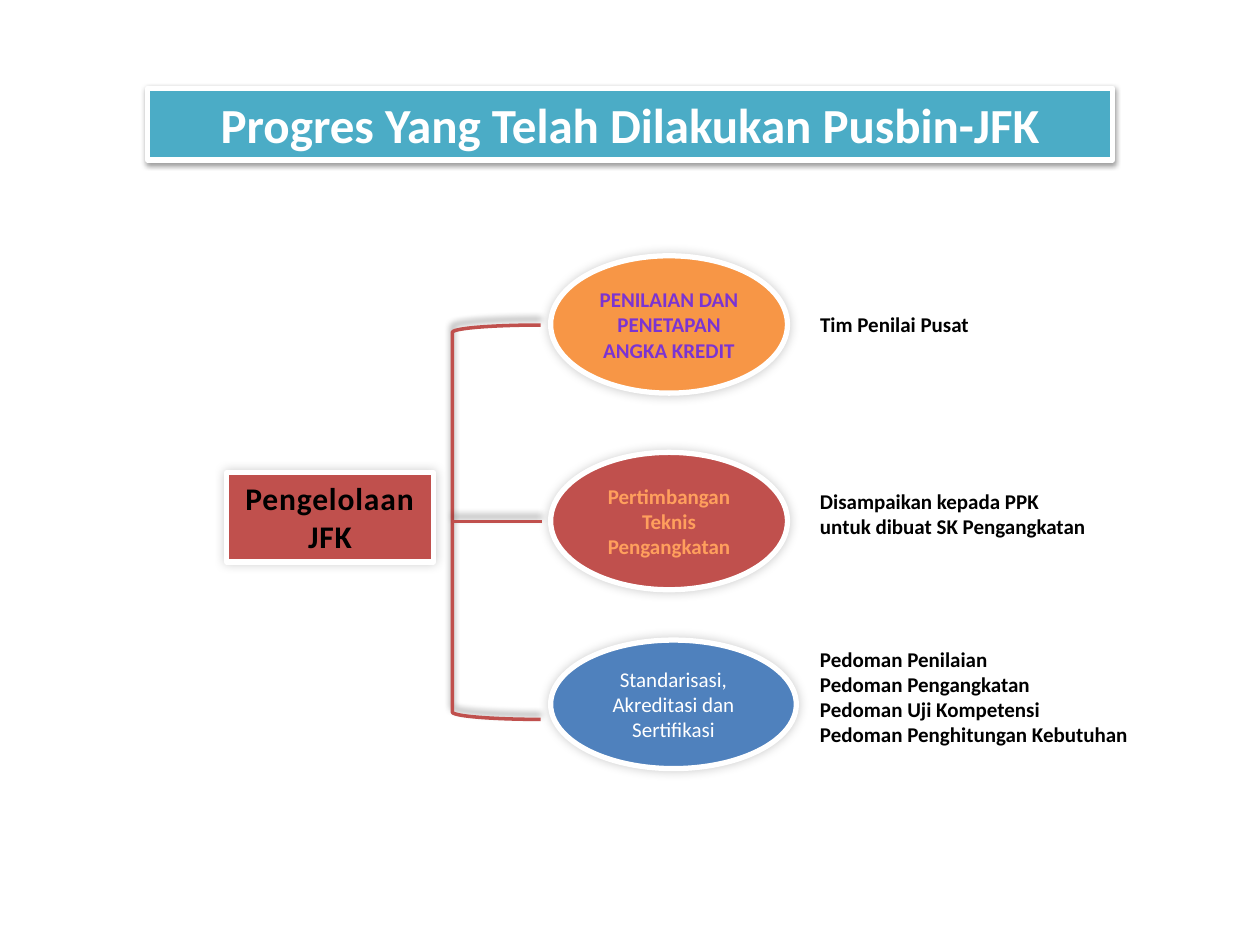
from lxml import etree
from pptx import Presentation
from pptx.dml.color import RGBColor
from pptx.enum.shapes import MSO_CONNECTOR, MSO_SHAPE
from pptx.enum.text import MSO_ANCHOR, PP_ALIGN
from pptx.oxml.ns import qn
from pptx.util import Inches, Pt

RECTANGLE, ELLIPSE, BRACKET = MSO_SHAPE.RECTANGLE, MSO_SHAPE.OVAL, MSO_SHAPE.LEFT_BRACKET
STRAIGHT = MSO_CONNECTOR.STRAIGHT
LEFT, CENTER = PP_ALIGN.LEFT, PP_ALIGN.CENTER
TOP, MIDDLE = MSO_ANCHOR.TOP, MSO_ANCHOR.MIDDLE

WHITE = RGBColor(0xFF, 0xFF, 0xFF)
BLACK = RGBColor(0x00, 0x00, 0x00)
TEAL = RGBColor(0x4B, 0xAC, 0xC6)
RED = RGBColor(0xC0, 0x50, 0x4D)
ORANGE = RGBColor(0xF7, 0x96, 0x46)
BLUE = RGBColor(0x4F, 0x81, 0xBD)
PURPLE = RGBColor(0x7B, 0x34, 0xD2)
PEACH = RGBColor(0xFF, 0x9F, 0x5D)

# Shadows: opacity in percent, blur and distance in points, angle in degrees
TITLE_SHADOW = (38, 3.1, 1.6, 90)
BOX_SHADOW = (20, 6, 0, 315)
LINE_SHADOW = (40, 4, 3, 270)

# Content
TITLE = "Progres Yang Telah Dilakukan Pusbin-JFK"
ROOT = "Pengelolaan JFK"
# text, fill, text colour, bold, (left, top, width, height)
BRANCHES = [
    ("PENILAIAN DAN PENETAPAN ANGKA KREDIT", ORANGE, PURPLE, True, (4.37, 2.03, 1.88, 1.09)),
    ("Pertimbangan Teknis Pengangkatan", RED, PEACH, True, (4.37, 3.59, 1.88, 1.09)),
    ("Standarisasi, Akreditasi dan Sertifikasi", BLUE, WHITE, False, (4.37, 5.08, 1.95, 1.02)),
]
NOTE_LEFT = 6.41
# lines, top, width, height
NOTES = [
    (["Tim Penilai Pusat"], 2.42, 1.48, 0.3),
    (["Disampaikan kepada PPK", "untuk dibuat SK Pengangkatan"], 3.83, 2.97, 0.5),
    (["Pedoman Penilaian", "Pedoman Pengangkatan", "Pedoman Uji Kompetensi",
      "Pedoman Penghitungan Kebutuhan"], 5.08, 3.36, 0.91),
]


def add_shadow(shape, opacity, blur, distance, angle):
    properties = shape._element.spPr
    effects = etree.SubElement(properties, qn("a:effectLst"))
    shadow = etree.SubElement(effects, qn("a:outerShdw"), blurRad=str(Pt(blur)),
                              dist=str(Pt(distance)), dir=str(angle * 60000),
                              algn="ctr", rotWithShape="0")
    color = etree.SubElement(shadow, qn("a:srgbClr"), val=str(BLACK))
    etree.SubElement(color, qn("a:alpha"), val=str(opacity * 1000))


def place(shape, box):
    shape.left, shape.top, shape.width, shape.height = map(Inches, box)


def style_box(shape, fill, shadow):
    shape.fill.solid()
    shape.fill.fore_color.rgb = fill
    shape.line.color.rgb = WHITE
    shape.line.width = Pt(3)
    add_shadow(shape, *shadow)


def style_line(shape):
    shape.line.color.rgb = RED
    shape.line.width = Pt(2)
    add_shadow(shape, *LINE_SHADOW)


def write(shape, lines, size, color, bold=True, align=CENTER, anchor=TOP, spacing=0):
    frame = shape.text_frame
    frame.word_wrap = True
    frame.vertical_anchor = anchor
    for index, line in enumerate(lines):
        paragraph = frame.add_paragraph() if index else frame.paragraphs[0]
        paragraph.alignment = align
        run = paragraph.add_run()
        run.text = line
        run.font.name = "Calibri"
        run.font.size = Pt(size)
        run.font.bold = bold
        run.font.color.rgb = color
        if spacing:
            run.font._element.set("spc", str(int(spacing * 100)))


presentation = Presentation()
presentation.slide_width, presentation.slide_height = Inches(10), Inches(7.5)
slide = presentation.slides.add_slide(presentation.slide_layouts[5])
shapes = slide.shapes

# Title banner
title = shapes.title
place(title, (1.17, 0.7, 7.66, 0.57))
style_box(title, TEAL, TITLE_SHADOW)
write(title, [TITLE], 28, WHITE, anchor=MIDDLE)

# Root box
root = shapes.add_shape(RECTANGLE, *map(Inches, (1.8, 3.75, 1.64, 0.71)))
style_box(root, RED, BOX_SHADOW)
write(root, [ROOT], 18, BLACK, spacing=0.5)

# Branch ellipses
for text, fill, color, bold, box in BRANCHES:
    ellipse = shapes.add_shape(ELLIPSE, *map(Inches, box))
    style_box(ellipse, fill, BOX_SHADOW)
    write(ellipse, [text], 12, color, bold, anchor=MIDDLE)

# Bracket and middle line
bracket = shapes.add_shape(BRACKET, *map(Inches, (3.59, 2.58, 0.7, 3.13)))
bracket.fill.background()
style_line(bracket)
middle = shapes.add_connector(STRAIGHT, *map(Inches, (3.59, 4.14, 4.3, 4.14)))
style_line(middle)

# Notes beside the branches
for lines, top, width, height in NOTES:
    note = shapes.add_textbox(*map(Inches, (NOTE_LEFT, top, width, height)))
    write(note, lines, 12, BLACK, align=LEFT)

presentation.save("out.pptx")
